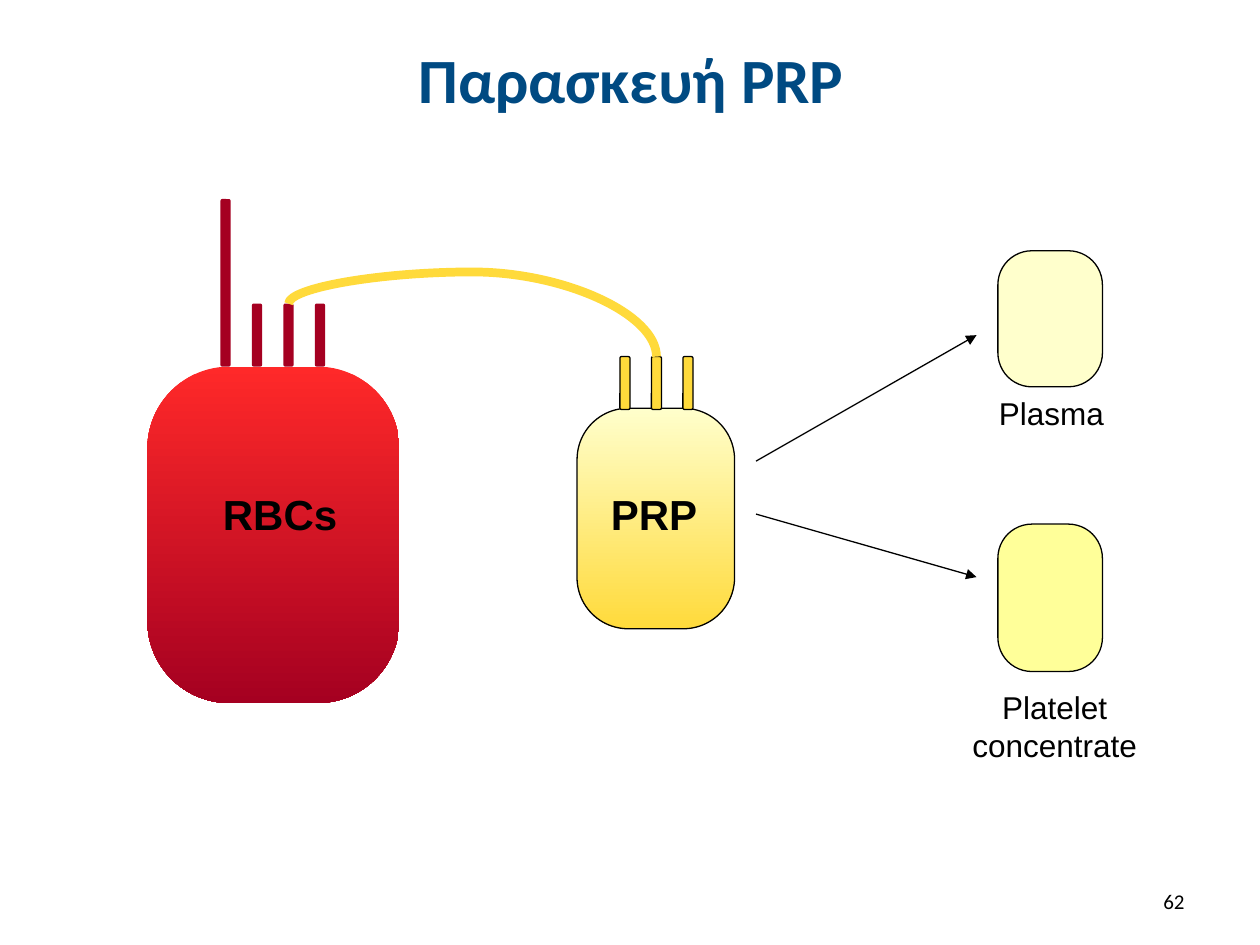
"""Build the slide on preparing platelet-rich plasma."""
from lxml import etree
from pptx import Presentation
from pptx.dml.color import RGBColor
from pptx.enum import shapes, text
from pptx.oxml import ns
from pptx.util import Inches, Pt

hue = RGBColor.from_string
deck = Presentation()
deck.slide_width, deck.slide_height = Inches(10), Inches(7.5)
slide = deck.slides.add_slide(deck.slide_layouts[6])
tree = slide.shapes
LEFT, MID, RIGHT = text.PP_ALIGN.LEFT, text.PP_ALIGN.CENTER, text.PP_ALIGN.RIGHT
TOP, HALF = text.MSO_ANCHOR.TOP, text.MSO_ANCHOR.MIDDLE
RED, GOLD, CREAM = "A50021", "FFDA3B", "FFFFCC"

bags = [
    (1.17, 2.91, 2, 2.67, 0.325, ("FF2929", RED), False),
    (4.58, 3.24, 1.25, 1.75, 0.325, (CREAM, GOLD), True),
    (7.92, 1.99, 0.83, 1.08, 0.325, (CREAM,), True),
    (7.92, 4.16, 0.83, 1.17, 0.325, ("FFFF99",), True),
]
tubes = [(1.75, 1.58, 0.08, 1.33, 0.167, (RED,), False)]
for n in range(3):
    tubes.append((2 + n * 0.25, 2.41, 0.08, 0.5, 0.167, (RED,), False))
    tubes.append((4.92 + n * 0.25, 2.83, 0.08, 0.42, 0.167, (GOLD,), True))

for x, y, w, h, bend, tones, edge in bags + tubes:
    part = tree.add_shape(shapes.MSO_SHAPE.ROUNDED_RECTANGLE,
                          Inches(x), Inches(y), Inches(w), Inches(h))
    part.adjustments[0] = bend
    part.shadow.inherit = False
    if len(tones) == 2:
        part.fill.gradient()
        part.fill.gradient_angle = 270
        for stop, tone, place in zip(part.fill.gradient_stops, tones, (0, 1)):
            stop.color.rgb = hue(tone)
            stop.position = place
    else:
        part.fill.solid()
        part.fill.fore_color.rgb = hue(tones[0])
    if edge:
        part.line.color.rgb = hue("000000")
        part.line.width = Pt(0.75)
    else:
        part.line.fill.background()


def link(kind, x1, y1, x2, y2, tone, wide):
    line = tree.add_connector(kind, Inches(x1), Inches(y1), Inches(x2), Inches(y2))
    line.line.color.rgb = hue(tone)
    line.line.width = Pt(wide)
    etree.SubElement(line._element.spPr, ns.qn("a:effectLst"))
    return line


hose = link(shapes.MSO_CONNECTOR.CURVE, 3.54, 4.08, 3.96, 1.16, GOLD, 5)
props = hose._element.spPr
props.find(ns.qn("a:xfrm")).set("rot", "5400000")
guides = props.find(ns.qn("a:prstGeom")).find(ns.qn("a:avLst"))
etree.SubElement(guides, ns.qn("a:gd"), name="adj1", fmla="val -60000")

for y1, y2 in [(3.66, 2.66), (4.08, 4.58)]:
    arrow = link(shapes.MSO_CONNECTOR.STRAIGHT, 6, y1, 7.75, y2, "000000", 0.75)
    etree.SubElement(arrow.line._get_or_add_ln(), ns.qn("a:tailEnd"), type="triangle")

labels = [
    ("RBCs", 1.67, 3.83, 1.25, 0.5, 24, "Arial", "000000", True, LEFT, TOP),
    ("PRP", 4.75, 3.83, 1.08, 0.5, 24, "Arial", "000000", True, LEFT, TOP),
    ("Plasma", 7.83, 3.08, 1.17, 0.4, 18, "Arial", "000000", False, LEFT, TOP),
    ("Platelet concentrate", 7.58, 5.41, 1.58, 0.7, 18, "Arial", "000000", False, MID, TOP),
    ("62", 7.17, 6.95, 2.33, 0.4, 12, "Calibri", "000000", False, RIGHT, HALF),
    ("Παρασκευή PRP", 0.51, 0.13, 9, 0.99, 36, "Calibri", "004A82", True, MID, HALF),
]
for words, x, y, w, h, size, face, tone, bold, side, hold in labels:
    frame = tree.add_textbox(Inches(x), Inches(y), Inches(w), Inches(h)).text_frame
    frame.word_wrap = True
    frame.vertical_anchor = hold
    para = frame.paragraphs[0]
    para.alignment = side
    run = para.add_run()
    run.text = words
    run.font.name, run.font.size, run.font.bold = face, Pt(size), bold
    run.font.color.rgb = hue(tone)

deck.save("out.pptx")
